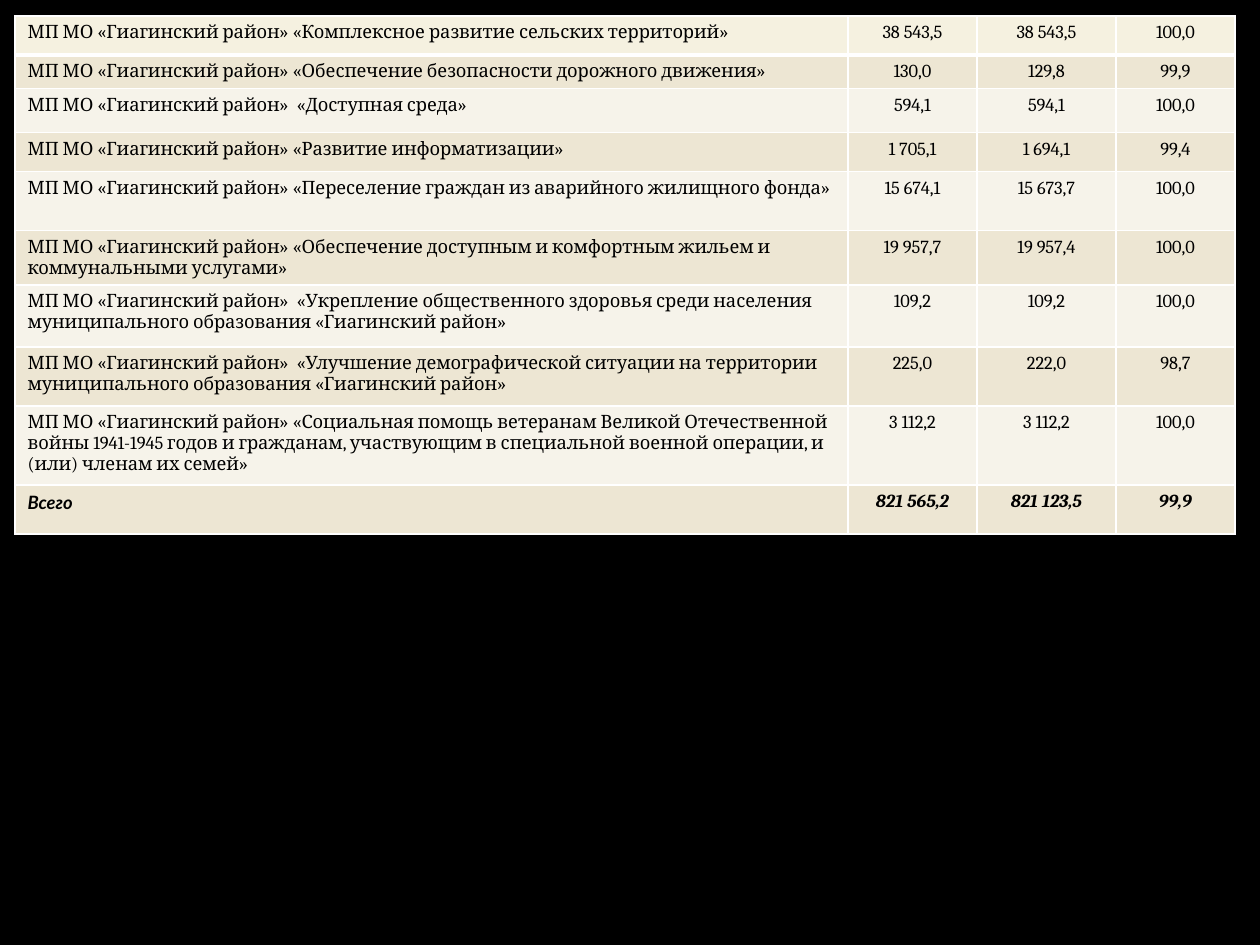
from dataclasses import dataclass

from lxml import etree
from pptx import Presentation
from pptx import util as u
from pptx.dml.color import RGBColor
from pptx.enum import text
from pptx.oxml import ns

PX_PER_INCH = 126
SLIDE_WIDTH, SLIDE_HEIGHT = 1260, 945


def px(length):
    return u.Emu(round(length * u.Inches(1) / PX_PER_INCH))


@dataclass(frozen=True)
class Theme:
    background: str = "000000"
    ink: str = "000000"
    border: str = "FFFFFF"
    first_row: str = "F5F1E0"
    dark_band: str = "EDE6D3"
    light_band: str = "F6F3EA"
    body_font: str = "Cambria"
    total_font: str = "Lato"
    body_size: float = 10.5
    thin_line: float = 1
    thick_line: float = 3


class ReportSlide:
    def __init__(self, presentation, theme):
        self.theme = theme
        self.slide = presentation.slides.add_slide(presentation.slide_layouts[6])
        fill = self.slide.background.fill
        fill.solid()
        fill.fore_color.rgb = RGBColor.from_string(theme.background)

    def table(self, left, top, widths, heights, rows):
        frame = self.slide.shapes.add_table(
            len(rows), len(widths), px(left), px(top), px(sum(widths)), px(sum(heights)))
        table = frame.table
        table.first_row = table.horz_banding = False
        for column, width in zip(table.columns, widths):
            column.width = px(width)
        for row, height in zip(table.rows, heights):
            row.height = px(height)
        for row_index, values in enumerate(rows):
            for column_index, value in enumerate(values):
                self.cell(table, row_index, column_index, value)

    def cell(self, table, row, column, value):
        theme = self.theme
        cell = table.cell(row, column)
        # The rule under the first row is heavier; both cells that share it agree.
        self.borders(cell, {
            "L": theme.thin_line,
            "R": theme.thin_line,
            "T": theme.thick_line if row == 1 else theme.thin_line,
            "B": theme.thick_line if row == 0 else theme.thin_line,
        })
        band = theme.dark_band if row % 2 else theme.light_band
        cell.fill.solid()
        cell.fill.fore_color.rgb = RGBColor.from_string(band if row else theme.first_row)

        is_total = row == len(table.rows) - 1
        is_name = column == 0
        paragraph = cell.text_frame.paragraphs[0]
        paragraph.alignment = text.PP_ALIGN.LEFT if is_name else text.PP_ALIGN.CENTER
        run = paragraph.add_run()
        run.text = value
        font_format = {
            "name": theme.total_font if is_total and is_name else theme.body_font,
            "size": u.Pt(theme.body_size),
            "bold": is_total,
            "italic": is_total,
        }
        for attribute, setting in font_format.items():
            setattr(run.font, attribute, setting)
        run.font.color.rgb = RGBColor.from_string(theme.ink)

    def borders(self, cell, points_by_side):
        """Add the cell's lines; call before the fill, which must follow them."""
        properties = cell._tc.get_or_add_tcPr()
        for side, points in points_by_side.items():
            line = etree.SubElement(properties, ns.qn(f"a:ln{side}"), w=str(u.Pt(points)))
            fill = etree.SubElement(line, ns.qn("a:solidFill"))
            etree.SubElement(fill, ns.qn("a:srgbClr"), val=self.theme.border)


DISTRICT = "«Гиагинский район»"
PROGRAM = f"МП МО {DISTRICT}"
COLUMN_WIDTHS = [833, 129, 139, 119]
ROW_HEIGHTS = [39, 32, 44, 39, 59, 49, 62, 59, 79, 49]
PROGRAMS = [
    (f"{PROGRAM} «Комплексное развитие сельских территорий»",
     "38 543,5", "38 543,5", "100,0"),
    (f"{PROGRAM} «Обеспечение безопасности дорожного движения»",
     "130,0", "129,8", "99,9"),
    (f"{PROGRAM}  «Доступная среда»",
     "594,1", "594,1", "100,0"),
    (f"{PROGRAM} «Развитие информатизации»",
     "1 705,1", "1 694,1", "99,4"),
    (f"{PROGRAM} «Переселение граждан из аварийного жилищного фонда»",
     "15 674,1", "15 673,7", "100,0"),
    (f"{PROGRAM} «Обеспечение доступным и комфортным жильем и коммунальными услугами»",
     "19 957,7", "19 957,4", "100,0"),
    (f"{PROGRAM}  «Укрепление общественного здоровья среди населения "
     f"муниципального образования {DISTRICT}",
     "109,2", "109,2", "100,0"),
    (f"{PROGRAM}  «Улучшение демографической ситуации на территории "
     f"муниципального образования {DISTRICT}",
     "225,0", "222,0", "98,7"),
    (f"{PROGRAM} «Социальная помощь ветеранам Великой Отечественной войны "
     "1941-1945 годов и гражданам, участвующим в специальной военной операции, "
     "и (или) членам их семей»",
     "3 112,2", "3 112,2", "100,0"),
    ("Всего", "821 565,2", "821 123,5", "99,9"),
]


def main():
    presentation = Presentation()
    presentation.slide_width = px(SLIDE_WIDTH)
    presentation.slide_height = px(SLIDE_HEIGHT)
    report = ReportSlide(presentation, Theme())
    report.table(15, 16, COLUMN_WIDTHS, ROW_HEIGHTS, PROGRAMS)
    presentation.save("out.pptx")


if __name__ == "__main__":
    main()
